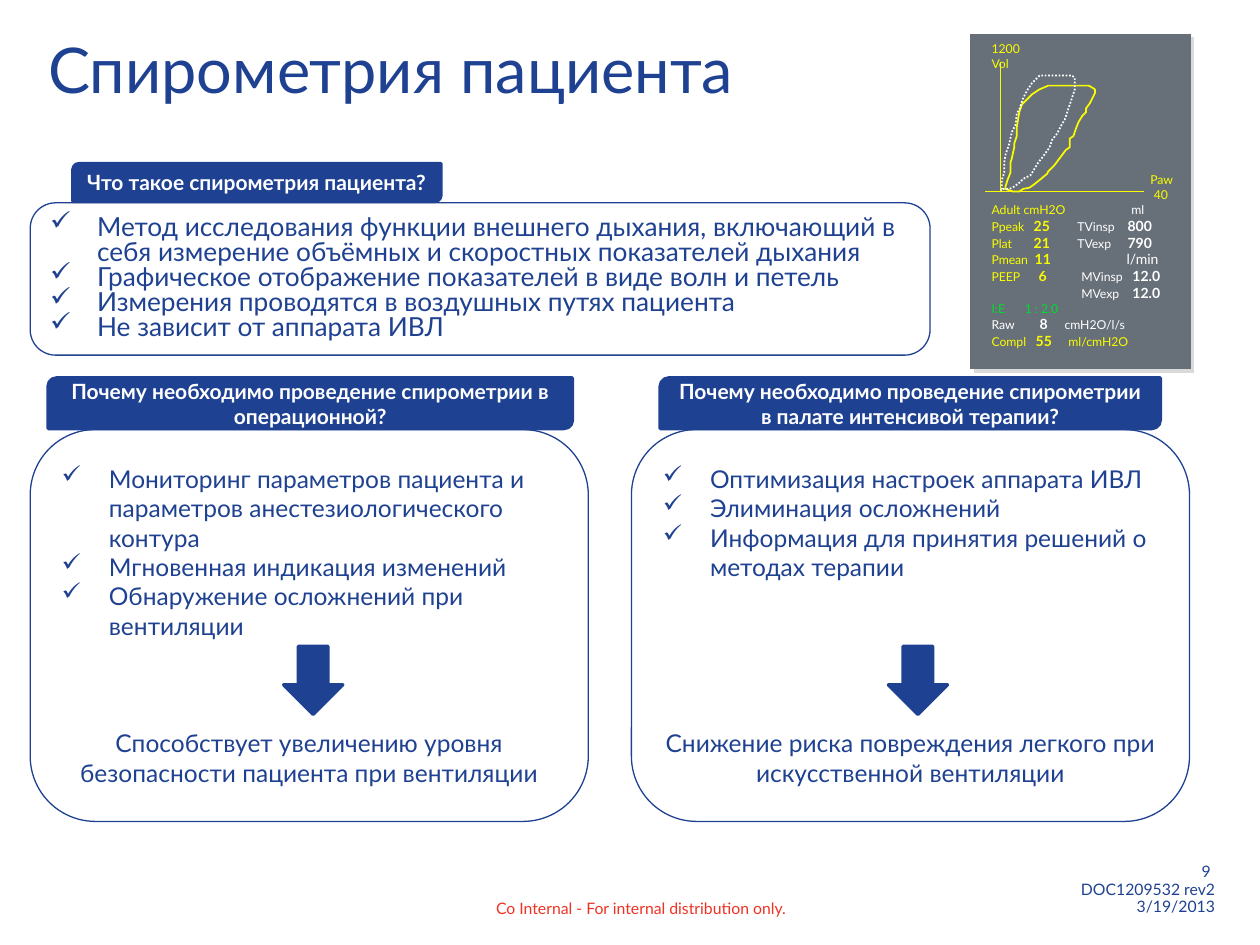
from lxml import etree
from pptx import Presentation, util as u
from pptx.dml.color import RGBColor
from pptx.enum import dml, shapes, text
from pptx.oxml import ns

COLORS = {
    "navy": "1E4191", "white": "FFFFFF", "red": "EE3324", "panel": "676F79",
    "yellow": "FAFD00", "green": "00DF2A", "shadow": "DADADA",
}
KIND = shapes.MSO_SHAPE
ALIGN = text.PP_ALIGN


def add_paragraph(frame, runs, size=14, color="navy", bold=False, align=ALIGN.LEFT,
                  spacing=None, before=0, bullet=False, indent=0, tabs=()):
    """Add a paragraph; runs is a string or a list of (text, size, color, bold)."""
    paragraph = frame.paragraphs[0]
    if paragraph.runs:
        paragraph = frame.add_paragraph()
    properties = paragraph._p.get_or_add_pPr()
    if bullet:
        properties.set("marL", str(u.Cm(0.95)))
        properties.set("indent", str(-u.Cm(0.95)))
        etree.SubElement(properties, ns.qn("a:buChar")).set("char", "✓")
    if indent:
        properties.set("marL", str(u.Cm(indent)))
    if tabs:
        tab_list = etree.SubElement(properties, ns.qn("a:tabLst"))
        for tab in tabs:
            etree.SubElement(tab_list, ns.qn("a:tab"), pos=str(u.Cm(tab)), algn="l")
    paragraph.alignment = align
    if spacing:
        paragraph.line_spacing = spacing
    if before:
        paragraph.space_before = u.Pt(before)
    if isinstance(runs, str):
        runs = [(runs, size, color, bold)]
    for run_text, run_size, run_color, run_bold in runs:
        run = paragraph.add_run()
        run.text = run_text
        run.font.name = "Lato"
        run.font.size = u.Pt(run_size)
        run.font.bold = run_bold
        run.font.color.rgb = RGBColor.from_string(COLORS[run_color])


def add_box(kind, left, top, width, height, fill=None, line=0.75, inset=True, wrap=True):
    """Add a preset shape, or a text box when kind is None; lengths in cm."""
    place = [u.Cm(length) for length in (left, top, width, height)]
    if kind is None:
        shape = slide.shapes.add_textbox(*place)
    else:
        shape = slide.shapes.add_shape(kind, *place)
        shape.shadow.inherit = False
        shape.line.color.rgb = RGBColor.from_string(COLORS["navy"])
        shape.line.width = u.Pt(line)
        if fill:
            shape.fill.solid()
            shape.fill.fore_color.rgb = RGBColor.from_string(COLORS[fill])
        else:
            shape.fill.background()
        shape.text_frame.vertical_anchor = text.MSO_ANCHOR.MIDDLE
    frame = shape.text_frame
    frame.word_wrap = wrap
    if not inset:
        frame.margin_left = frame.margin_right = frame.margin_top = frame.margin_bottom = 0
    return frame


presentation = Presentation()
presentation.slide_width = u.Cm(25.4)
presentation.slide_height = u.Cm(19.05)
slide = presentation.slides.add_slide(presentation.slide_layouts[6])

# Footer
frame = add_box(None, 17.91, 17.3, 6.83, 1.3)
for footer_line in ("9 ", "DOC1209532 rev2", "3/19/2013"):
    add_paragraph(frame, footer_line, size=9, align=ALIGN.RIGHT, spacing=0.9)
frame = add_box(None, 7.92, 18.11, 10, 0.36, inset=False)
add_paragraph(frame, "Co Internal - For internal distribution only.", size=9,
              color="red", align=ALIGN.CENTER)

# Title
frame = add_box(None, 0.97, 0.79, 16.5, 2.77, inset=False)
add_paragraph(frame, "Спирометрия пациента", size=36, spacing=0.9)

# Definition
frame = add_box(KIND.ROUNDED_RECTANGLE, 0.61, 4.09, 18.14, 3.07)
for point in (
    "Метод исследования функции внешнего дыхания, включающий в себя измерение "
    "объёмных и скоростных показателей дыхания",
    "Графическое отображение показателей в виде волн и петель",
    "Измерения проводятся в воздушных путях пациента",
    "Не зависит от аппарата ИВЛ",
):
    add_paragraph(frame, point, size=15, spacing=0.8, bullet=True)
frame = add_box(KIND.ROUND_2_DIAG_RECTANGLE, 1.47, 3.3, 7.42, 0.76, fill="navy", line=2)
add_paragraph(frame, "Что такое спирометрия пациента?", size=12, color="white", bold=True)

# Two reasons: box left, heading left and width, arrow left, texts, gap before the result
reasons = [
    (0.61, 0.97, 10.57, 5.72,
     "Почему необходимо проведение спирометрии в операционной?",
     ["Мониторинг параметров пациента и параметров анестезиологического контура",
      "Мгновенная индикация изменений",
      "Обнаружение осложнений при вентиляции"],
     "Способствует увеличению уровня безопасности пациента при вентиляции", 50.4),
    (12.73, 13.31, 10.08, 17.91,
     "Почему необходимо проведение спирометрии в палате интенсивой терапии?",
     ["Оптимизация настроек аппарата ИВЛ",
      "Элиминация осложнений",
      "Информация для принятия решений о методах терапии"],
     "Снижение риска повреждения легкого при искусственной вентиляции", 84),
]
for left, head_left, head_width, arrow_left, heading, points, result, gap in reasons:
    frame = add_box(KIND.ROUNDED_RECTANGLE, left, 8.66, 11.25, 7.9)
    for point in points:
        add_paragraph(frame, point, bullet=True)
    add_paragraph(frame, result, align=ALIGN.CENTER, before=gap)
    frame = add_box(KIND.ROUND_2_DIAG_RECTANGLE, head_left, 7.62, head_width, 1.02,
                    fill="navy", line=2)
    add_paragraph(frame, heading, size=12, color="white", bold=True, align=ALIGN.CENTER)
    add_box(KIND.DOWN_ARROW, arrow_left, 13.03, 1.19, 1.37, fill="navy", line=2)

# Monitor outlines, in hundredths of an inch: points, fill, line, dash
panel = [(770, 27), (945, 27), (945, 293), (770, 293)]
current_loop = [
    (804, 152), (809, 152), (812, 150), (817, 149), (820, 147), (825, 143), (831, 138),
    (832, 136), (837, 131), (843, 123), (846, 119), (849, 117), (849, 110), (852, 108),
    (854, 102), (856, 97), (859, 92), (862, 89), (862, 86), (865, 82), (867, 78),
    (869, 74), (869, 71), (866, 69), (864, 68), (832, 68), (825, 71), (819, 75),
    (814, 80), (811, 83), (809, 89), (808, 95), (807, 101), (807, 108), (805, 114),
    (805, 117), (803, 126), (802, 129), (802, 137), (800, 142), (798, 148), (798, 150),
]
reference_loop = [
    (794, 152), (796, 150), (801, 150), (805, 148), (809, 145), (812, 142), (818, 139),
    (821, 134), (824, 129), (828, 124), (833, 117), (835, 111), (839, 106), (842, 100),
    (845, 95), (848, 86), (851, 77), (853, 71), (853, 62), (851, 60), (825, 60),
    (822, 63), (819, 66), (815, 72), (812, 78), (809, 87), (807, 90), (806, 99),
    (803, 105), (801, 114), (798, 123), (797, 129), (797, 137), (795, 143), (795, 149),
]
for points, fill, line, dash in (
    (panel, "panel", None, None),
    (current_loop, None, "yellow", None),
    (reference_loop, None, "white", dml.MSO_LINE.ROUND_DOT),
):
    builder = slide.shapes.build_freeform(*points[0], scale=u.Cm(0.0254))
    builder.add_line_segments(points[1:], close=True)
    shape = builder.convert_to_shape()
    shape.shadow.inherit = False
    if fill:
        shape.fill.solid()
        shape.fill.fore_color.rgb = RGBColor.from_string(COLORS[fill])
        shape.line.fill.background()
        effects = shape._element.spPr.find(ns.qn("a:effectLst"))
        shadow = etree.SubElement(effects, ns.qn("a:outerShdw"), dist=str(u.Pt(2.8)),
                                  dir="2700000", algn="ctr", rotWithShape="0")
        etree.SubElement(shadow, ns.qn("a:srgbClr"), val=COLORS["shadow"])
    else:
        shape.fill.background()
        shape.line.color.rgb = RGBColor.from_string(COLORS[line])
        shape.line.width = u.Pt(1)
        if dash:
            shape.line.dash_style = dash

# Monitor axes
for ends in ((20.17, 1.24, 20.17, 3.86), (19.86, 3.86, 23.06, 3.86)):
    axis = slide.shapes.add_connector(shapes.MSO_CONNECTOR.STRAIGHT,
                                      *[u.Cm(length) for length in ends])
    axis.line.color.rgb = RGBColor.from_string(COLORS["yellow"])
    axis.line.width = u.Pt(1)
    etree.SubElement(axis._element.spPr, ns.qn("a:effectLst"))
frame = add_box(None, 19.74, 0.71, 1.42, 0.86, wrap=False)
for label in ("1200", "Vol"):
    add_paragraph(frame, label, size=7, color="yellow")
frame = add_box(None, 22.94, 3.35, 0.97, 0.84, wrap=False)
add_paragraph(frame, "Paw", size=7, color="yellow")
add_paragraph(frame, "40", size=7, color="yellow", indent=0.07)

# Monitor readings: tab stops in cm, then one run per column
readings = [
    ([2.82], [("Adult cmH2O", 7, "yellow", False), ("ml", 7, "white", False)]),
    ([0.85, 1.73, 2.74], [("Ppeak", 7, "yellow", False), ("25", 8, "yellow", True),
                          ("TVinsp", 7, "white", False), ("800", 8, "white", True)]),
    ([0.85, 1.73, 2.74], [("Plat", 7, "yellow", False), ("21", 8, "yellow", True),
                          ("TVexp", 7, "white", False), ("790", 8, "white", True)]),
    ([0.87, 2.72], [("Pmean", 7, "yellow", False), ("11", 8, "yellow", True),
                    ("l/min", 8, "white", False)]),
    ([0.95, 1.81, 2.84], [("PEEP", 7, "yellow", False), ("6", 8, "yellow", True),
                          ("MVinsp", 7, "white", False), ("12.0", 8, "white", True)]),
    ([1.81, 2.84], [("", 7, "white", False), ("MVexp", 7, "white", False),
                    ("12.0", 8, "white", True)]),
    ([0.67], [("I:E", 7, "green", False), ("1 : 2.0", 7, "green", False)]),
    ([0.97, 1.47], [("Raw", 7, "white", False), ("8", 8, "white", True),
                    ("cmH2O/l/s", 7, "white", False)]),
    ([0.89, 1.55], [("Compl", 7, "yellow", False), ("55", 8, "yellow", True),
                    ("ml/cmH2O", 7, "yellow", False)]),
]
frame = add_box(None, 19.74, 3.96, 4.11, 3.25)
for tabs, columns in readings:
    runs = [("\t" * (column > 0) + cell[0], *cell[1:]) for column, cell in enumerate(columns)]
    add_paragraph(frame, runs, tabs=tabs)

presentation.save("out.pptx")
